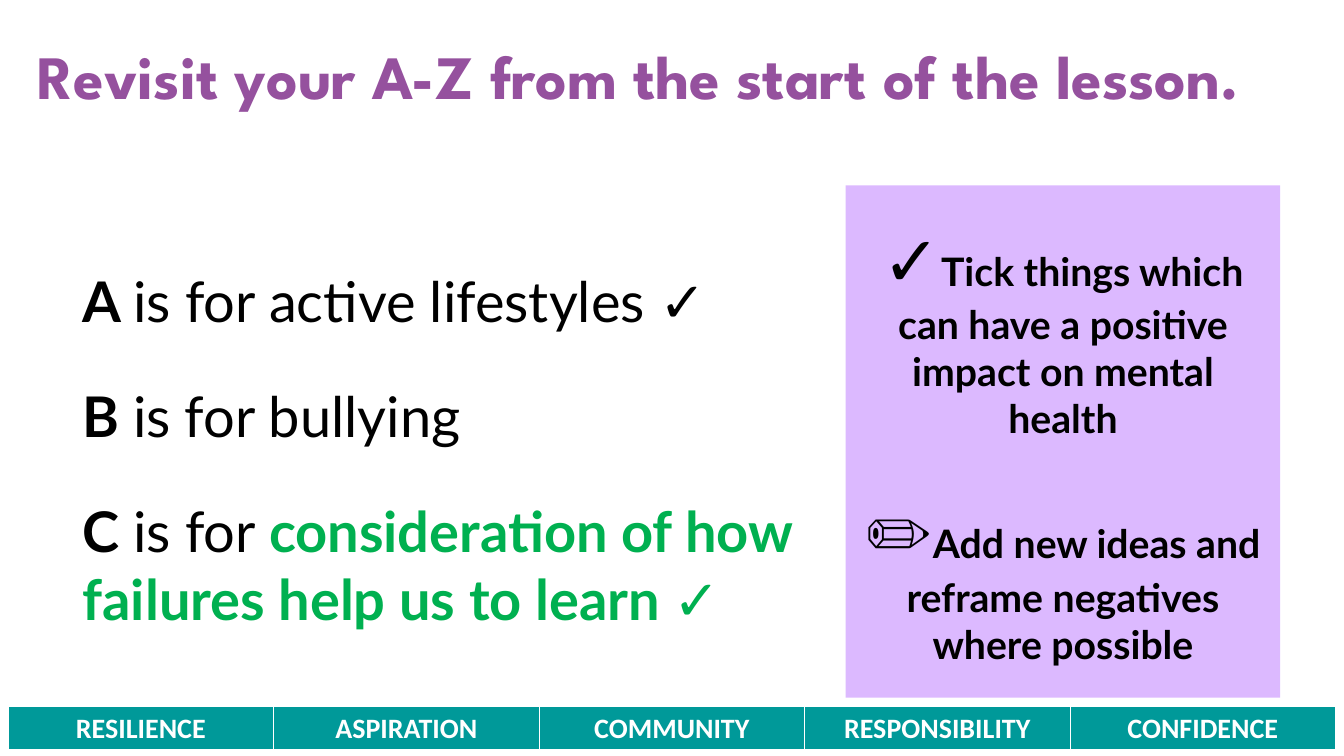
import dataclasses

import pptx
import pptx.dml.color
import pptx.enum.shapes
import pptx.enum.text
import pptx.oxml
import pptx.oxml.ns
import pptx.presentation
import pptx.slide
import pptx.util

Pt = pptx.util.Pt
ALIGN = pptx.enum.text.PP_ALIGN
ANCHOR = pptx.enum.text.MSO_ANCHOR


@dataclasses.dataclass(frozen=True)
class Theme:
    heading_font: str = "League Spartan"
    body_font: str = "Lato"
    footer_font: str = "Calibri"
    purple: str = "95519E"
    lilac: str = "DCB9FF"
    green: str = "00B050"
    teal: str = "009999"
    black: str = "000000"
    white: str = "FFFFFF"
    title_size: float = 44
    list_size: float = 40
    icon_size: float = 50
    panel_size: float = 28
    footer_size: float = 20


THEME = Theme()


@dataclasses.dataclass(frozen=True)
class Box:
    left: float
    top: float
    width: float
    height: float

    def lengths(self) -> tuple[pptx.util.Length, ...]:
        return tuple(Pt(value) for value in dataclasses.astuple(self))


@dataclasses.dataclass(frozen=True)
class Span:
    text: str
    size: float
    bold: bool = True
    color: str = THEME.black
    font: str = THEME.body_font


@dataclasses.dataclass(frozen=True)
class Entry:
    letter: str
    plain: str
    ending: str = ""
    ending_color: str = THEME.black

    def spans(self) -> list[Span]:
        size = THEME.list_size
        spans = [Span(f"{self.letter} ", size), Span(self.plain, size, bold=False)]
        if self.ending:
            spans.append(Span(self.ending, size, color=self.ending_color))
        return spans


@dataclasses.dataclass(frozen=True)
class Task:
    icon: str
    text: str

    def spans(self) -> list[Span]:
        return [Span(self.icon, THEME.icon_size), Span(self.text, THEME.panel_size)]


TITLE_BOX = Box(19.4, 23.8, 910.8, 113.8)
LIST_BOX = Box(51.8, 186.5, 552.2, 270.7)
PANEL_BOX = Box(604.1, 132.5, 310.3, 365.8)
FOOTER_BOX = Box(5.8, 504.7, 948.2, 31.7)

ENTRIES = [
    Entry("A", "is for active lifestyles ", "✓"),
    Entry("B", "is for bullying"),
    Entry("C", "is for ", "consideration of how failures help us to learn ✓", THEME.green),
]
TASKS = [
    Task("✓", "Tick things which can have a positive impact on mental health"),
    Task("✏", "Add new ideas and reframe negatives where possible"),
]
VALUES = ["RESILIENCE", "ASPIRATION", "COMMUNITY", "RESPONSIBILITY", "CONFIDENCE"]


def rgb(color: str) -> pptx.dml.color.RGBColor:
    return pptx.dml.color.RGBColor.from_string(color)


def write(frame, paragraphs: list[list[Span]], *, align=ALIGN.LEFT,
          anchor=ANCHOR.TOP, gap: float = 0) -> None:
    """Fill a text frame, leaving the gap between its paragraphs."""
    frame.word_wrap = True
    frame.auto_size = pptx.enum.text.MSO_AUTO_SIZE.NONE
    frame.vertical_anchor = anchor
    for index, spans in enumerate(paragraphs):
        para = frame.paragraphs[0] if index == 0 else frame.add_paragraph()
        para.alignment = align
        para.line_spacing = 1.0
        para.space_before = Pt(gap if index else 0)
        for span in spans:
            run = para.add_run()
            run.text = span.text
            run.font.name = span.font
            run.font.size = Pt(span.size)
            run.font.bold = span.bold
            run.font.color.rgb = rgb(span.color)


def place(shape, box: Box) -> None:
    shape.left, shape.top, shape.width, shape.height = box.lengths()


def remove_bullets(frame) -> None:
    for para in frame.paragraphs:
        properties = para._p.get_or_add_pPr()
        properties.set("marL", "0")
        properties.set("indent", "0")
        properties.append(pptx.oxml.parse_xml(
            f'<a:buNone {pptx.oxml.ns.nsdecls("a")}/>'))


def add_panel(page: pptx.slide.Slide) -> None:
    panel = page.shapes.add_shape(
        pptx.enum.shapes.MSO_SHAPE.RECTANGLE, *PANEL_BOX.lengths())
    panel.shadow.inherit = False
    panel.fill.solid()
    panel.fill.fore_color.rgb = rgb(THEME.lilac)
    panel.line.fill.background()
    write(panel.text_frame, [task.spans() for task in TASKS],
          align=ALIGN.CENTER, anchor=ANCHOR.MIDDLE, gap=34)


def add_borders(cell) -> None:
    properties = cell._tc.get_or_add_tcPr()
    widths = {"lnL": 1, "lnR": 1, "lnT": 1, "lnB": 3}
    for index, (side, width) in enumerate(widths.items()):
        properties.insert(index, pptx.oxml.parse_xml(
            f'<a:{side} {pptx.oxml.ns.nsdecls("a")} w="{Pt(width)}"><a:solidFill>'
            f'<a:srgbClr val="{THEME.white}"/></a:solidFill></a:{side}>'))


def add_footer(page: pptx.slide.Slide) -> None:
    table = page.shapes.add_table(1, len(VALUES), *FOOTER_BOX.lengths()).table
    for column, cell, value in zip(table.columns, table.rows[0].cells, VALUES):
        column.width = Pt(FOOTER_BOX.width / len(VALUES))
        cell.fill.solid()
        cell.fill.fore_color.rgb = rgb(THEME.teal)
        cell.vertical_anchor = ANCHOR.TOP
        add_borders(cell)
        para = cell.text_frame.paragraphs[0]
        para.alignment = ALIGN.CENTER
        run = para.add_run()
        run.text = value
        run.font.name = THEME.footer_font
        run.font.size = Pt(THEME.footer_size)
        run.font.bold = True
        run.font.color.rgb = rgb(THEME.white)


def build_page(deck: pptx.presentation.Presentation) -> None:
    page = deck.slides.add_slide(deck.slide_layouts[1])
    title, body = page.placeholders
    place(title, TITLE_BOX)
    write(title.text_frame, [[Span(
        "Revisit your A-Z from the start of the lesson.", THEME.title_size,
        color=THEME.purple, font=THEME.heading_font)]])
    place(body, LIST_BOX)
    write(body.text_frame, [entry.spans() for entry in ENTRIES], gap=34.4)
    remove_bullets(body.text_frame)
    add_panel(page)
    add_footer(page)


def main() -> None:
    deck = pptx.Presentation()
    deck.slide_width, deck.slide_height = Pt(960), Pt(540)
    build_page(deck)
    deck.save("out.pptx")


if __name__ == "__main__":
    main()
